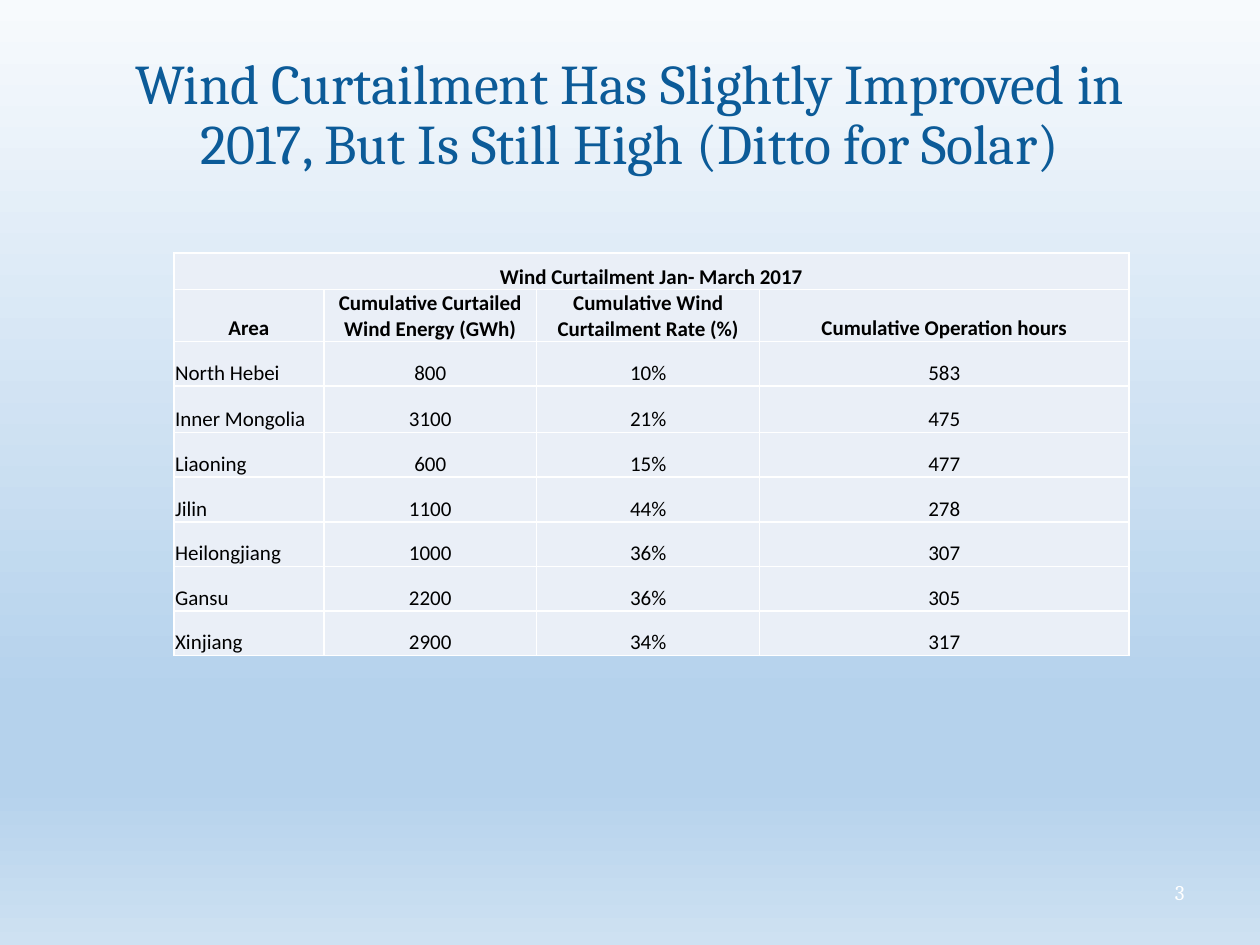
from lxml import etree
from pptx import Presentation
from pptx import util as u
from pptx.dml.color import RGBColor
from pptx.enum import text
from pptx.oxml import ns

COLOURS = {"title": "0C5B98", "ink": "000000", "white": "FFFFFF", "cell": "EAEFF7"}
BACKGROUND = [(0, "F7FAFD"), (74, "B5D2EC"), (83, "B5D2EC"), (100, "CEE1F2")]

deck = Presentation()
deck.slide_width, deck.slide_height = u.Inches(10), u.Inches(7.5)
page = deck.slides.add_slide(deck.slide_layouts[6])

# Grid of 100 columns by 75 rows
COLUMN, ROW = deck.slide_width / 100, deck.slide_height / 75


def place(left, top, width, height):
    return [int(n * unit) for n, unit in
            zip((left, top, width, height), (COLUMN, ROW, COLUMN, ROW))]


def write(para, words, size, font, colour, align, bold=False):
    para.alignment = align
    span = para.add_run()
    span.text = words
    span.font.size, span.font.name, span.font.bold = u.Pt(size), font, bold
    span.font.color.rgb = RGBColor.from_string(COLOURS[colour])


# Background gradient, top to bottom
fill = page.background.fill
fill.gradient()
fill.gradient_angle = 270
stops = page.background._cSld.find(".//" + ns.qn("a:gsLst"))
for stop in list(stops):
    stops.remove(stop)
for position, colour in BACKGROUND:
    stop = etree.SubElement(stops, ns.qn("a:gs"), pos=str(position * 1000))
    etree.SubElement(stop, ns.qn("a:srgbClr"), val=colour)

# Title and page number
ALIGN = text.PP_ALIGN
for area, words, size, colour, align, spacing in [
    ((5, 3, 90, 12.5),
     "Wind Curtailment Has Slightly Improved in 2017, But Is Still High (Ditto for Solar)",
     32, "title", ALIGN.CENTER, 0.9),
    ((71.7, 68.8, 23.3, 4), "3", 12, "white", ALIGN.RIGHT, 1.0),
]:
    box = page.shapes.add_textbox(*place(*area))
    box.text_frame.word_wrap = True
    box.text_frame.vertical_anchor = text.MSO_ANCHOR.MIDDLE
    para = box.text_frame.paragraphs[0]
    para.line_spacing = spacing
    write(para, words, size, "Cambria", colour, align)

# Curtailment table
records = [
    ["Wind Curtailment Jan- March 2017"],
    ["Area", "Cumulative Curtailed Wind Energy (GWh)",
     "Cumulative Wind Curtailment Rate (%)", "Cumulative Operation hours"],
    ["North Hebei", "800", "10%", "583"],
    ["Inner Mongolia", "3100", "21%", "475"],
    ["Liaoning", "600", "15%", "477"],
    ["Jilin", "1100", "44%", "278"],
    ["Heilongjiang", "1000", "36%", "307"],
    ["Gansu", "2200", "36%", "305"],
    ["Xinjiang", "2900", "34%", "317"],
]
widths = [11.9, 16.9, 17.7, 29.3]
heights = [2.9, 4.1, 3.54, 3.7] + [3.54] * 5
table = page.shapes.add_table(
    len(heights), len(widths), *place(13.8, 20.1, sum(widths), sum(heights))).table
table.first_row = table.horz_banding = False
for column, width in zip(table.columns, widths):
    column.width = int(width * COLUMN)
for row, height in zip(table.rows, heights):
    row.height = int(height * ROW)
table.cell(0, 0).merge(table.cell(0, len(widths) - 1))

for r in range(len(heights)):
    for c in range(len(widths)):
        cell = table.cell(r, c)
        cell.vertical_anchor = text.MSO_ANCHOR.BOTTOM
        cell.margin_left = cell.margin_right = cell.margin_top = u.Inches(0.01)
        cell.margin_bottom = 0
        # White borders go ahead of the fill
        properties = cell._tc.get_or_add_tcPr()
        for side in "LRTB":
            line = etree.SubElement(properties, ns.qn("a:ln" + side), w=str(u.Pt(1)))
            solid = etree.SubElement(line, ns.qn("a:solidFill"))
            etree.SubElement(solid, ns.qn("a:srgbClr"), val=COLOURS["white"])
        cell.fill.solid()
        cell.fill.fore_color.rgb = RGBColor.from_string(COLOURS["cell"])
        if c < len(records[r]):
            header = r < 2
            align = ALIGN.CENTER if header or c else ALIGN.LEFT
            write(cell.text_frame.paragraphs[0], records[r][c], 12, "Calibri",
                  "ink", align, header)

deck.save("out.pptx")
